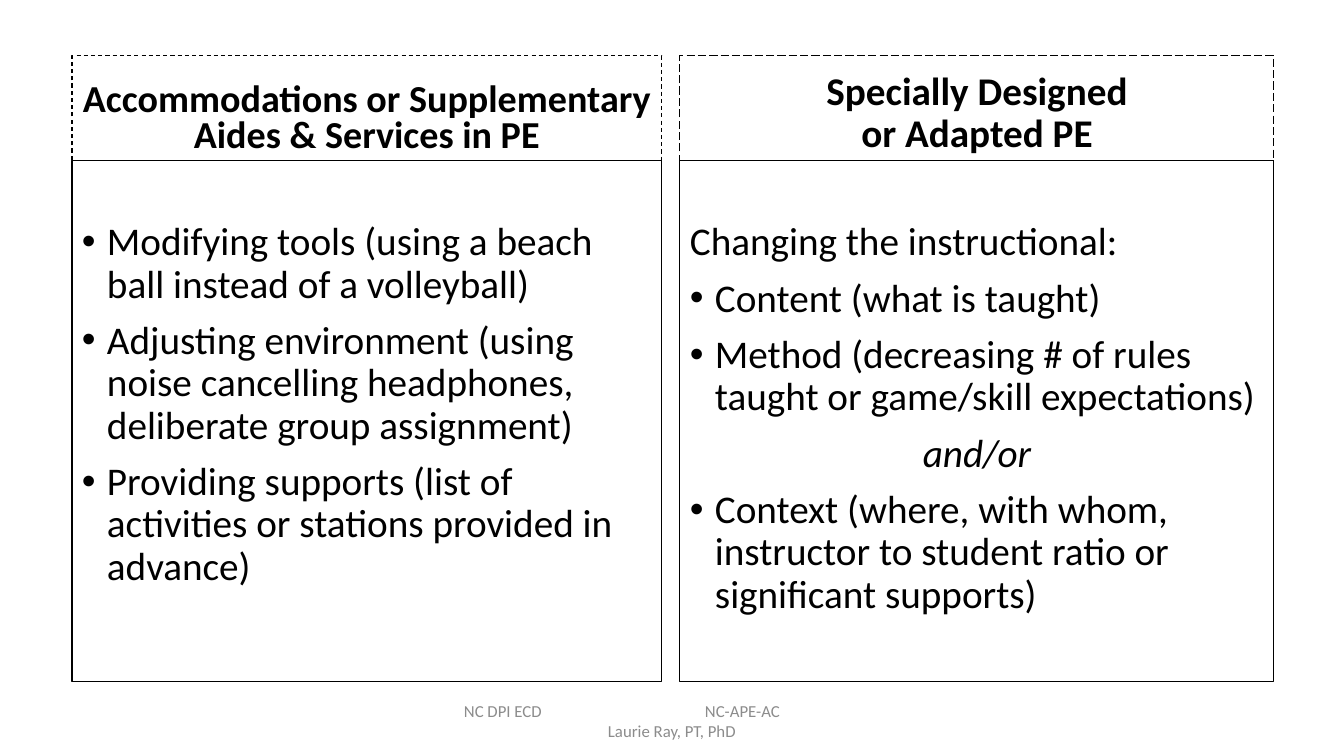
from pptx import Presentation
from pptx.dml.color import RGBColor as RGB
from pptx.enum.dml import MSO_LINE as Dash
from pptx.enum.shapes import MSO_SHAPE as Geo
from pptx.enum.text import MSO_ANCHOR as Anchor, PP_ALIGN as Align
from pptx.oxml.ns import qn
from pptx.util import Pt
from lxml.etree import SubElement as Sub

# Content: each column has a heading and (style, text) body lines
COLS = [
    dict(x=72, w=590, dash=Dash.DASH, size=27.2, lead=0.8, after=12,
         head=["Accommodations or Supplementary Aides & Services in PE"],
         body=[("bullet", "Modifying tools (using a beach ball instead of a volleyball)"),
               ("bullet", "Adjusting environment (using noise cancelling headphones, "
                          "deliberate group assignment)"),
               ("bullet", "Providing supports (list of activities or stations "
                          "provided in advance)")]),
    dict(x=680, w=594, dash=Dash.LONG_DASH, size=28, lead=0.9, after=0,
         head=["Specially Designed", "or Adapted PE"],
         body=[("plain", "Changing the instructional:"),
               ("bullet", "Content (what is taught)"),
               ("bullet", "Method (decreasing # of rules taught or game/skill expectations)"),
               ("join", "and/or"),
               ("bullet", "Context (where, with whom, instructor to student ratio "
                          "or significant supports)")]),
]
FOOT = [("NC DPI ECD\tNC-APE-AC", Align.LEFT),
        ("Laurie Ray, PT, PhD", Align.CENTER)]

THEME = dict(font="Calibri", ink=RGB(0, 0, 0), grey=RGB(0x8C, 0x8C, 0x8C),
             body=28, foot=12, line=0.75)

# Layout in px
TOP, HEAD, BODY = 56, 105, 521
PAD, EDGE, DROP = 10, 5, 61
HANG, TAB = 25, 241


def px(n):
    return round(n * 914400 / 100.8)


def setup(shape, anchor, side, top, low):
    frame = shape.text_frame
    frame.word_wrap = True
    frame.vertical_anchor = anchor
    frame.margin_left = frame.margin_right = px(side)
    frame.margin_top, frame.margin_bottom = px(top), px(low)
    return frame


def panel(col, top, high, dash=None):
    box = slide.shapes.add_shape(Geo.RECTANGLE, px(col["x"]), px(top),
                                 px(col["w"]), px(high))
    box.shadow.inherit = False
    box.fill.background()
    box.line.color.rgb = THEME["ink"]
    box.line.width = Pt(THEME["line"])
    if dash:
        box.line.dash_style = dash
    return box


def write(frame, i, text, size, color, align=Align.LEFT, bold=False, italic=False):
    para = frame.add_paragraph() if i else frame.paragraphs[0]
    para.alignment = align
    run = para.add_run()
    run.text = text
    font = run.font
    font.name, font.size, font.bold, font.italic = THEME["font"], Pt(size), bold, italic
    font.color.rgb = color
    return para


def bullet(para):
    props = para._p.get_or_add_pPr()
    props.set("marL", str(px(HANG)))
    props.set("indent", str(-px(HANG)))
    Sub(props, qn("a:buFont")).set("typeface", "Arial")
    Sub(props, qn("a:buChar")).set("char", "•")


deck = Presentation()
deck.slide_width, deck.slide_height = px(1344), px(756)
slide = deck.slides.add_slide(deck.slide_layouts[6])

# Two columns: heading above, list below
for col in COLS:
    frame = setup(panel(col, TOP, HEAD, col["dash"]), Anchor.BOTTOM, PAD, EDGE, EDGE)
    for i, text in enumerate(col["head"]):
        para = write(frame, i, text, col["size"], THEME["ink"], Align.CENTER, bold=True)
        para.line_spacing = col["lead"]
        para.space_after = Pt(col["after"])

    frame = setup(panel(col, TOP + HEAD, BODY), Anchor.TOP, PAD, DROP, EDGE)
    for i, (kind, text) in enumerate(col["body"]):
        join = kind == "join"
        para = write(frame, i, text, THEME["body"], THEME["ink"],
                     Align.CENTER if join else Align.LEFT, italic=join)
        para.line_spacing = 0.9
        para.space_before = Pt(10 if i else 0)
        if kind == "bullet":
            bullet(para)

# Footer: a tab sets the second name apart
box = slide.shapes.add_textbox(px(445), px(701), px(454), px(40))
frame = setup(box, Anchor.MIDDLE, 19, 0, 0)
for i, (text, align) in enumerate(FOOT):
    para = write(frame, i, text, THEME["foot"], THEME["grey"], align)
    if "\t" in text:
        tabs = Sub(para._p.get_or_add_pPr(), qn("a:tabLst"))
        stop = Sub(tabs, qn("a:tab"))
        stop.set("pos", str(px(TAB)))
        stop.set("algn", "l")

deck.save("out.pptx")
